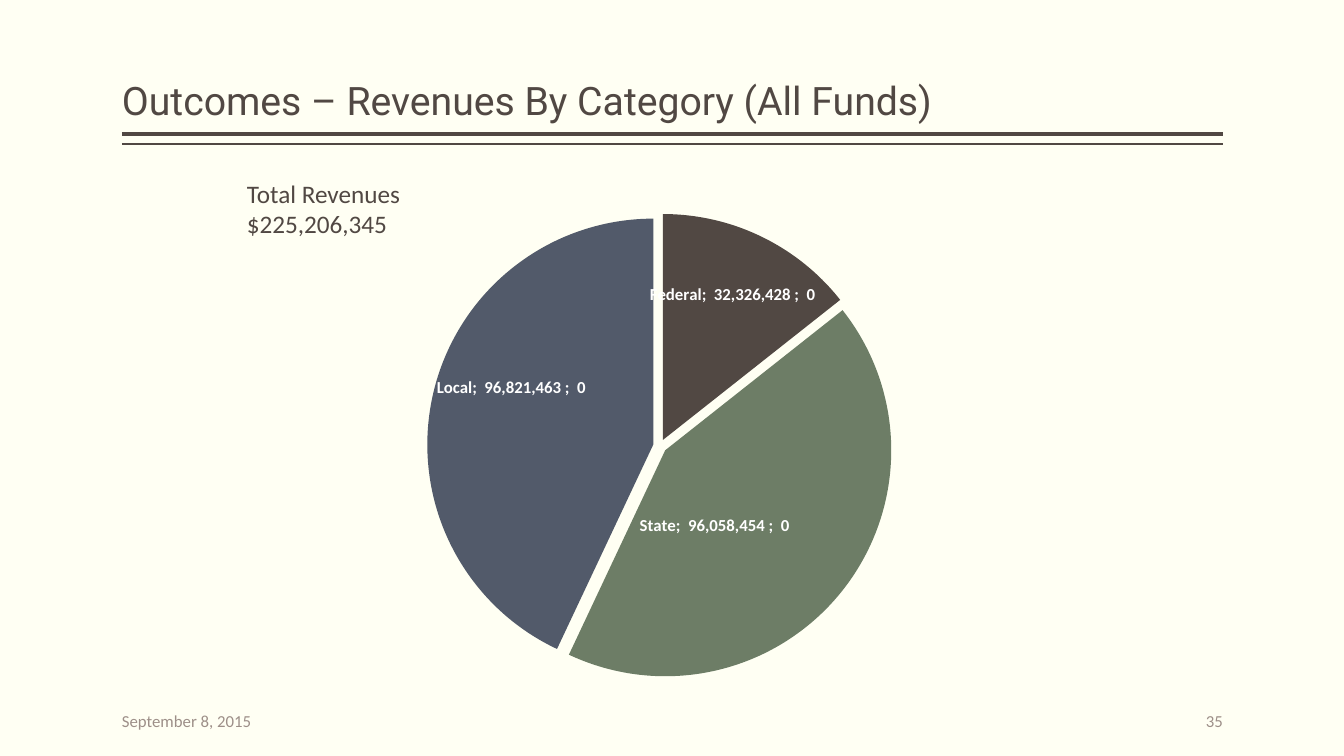
from copy import deepcopy
from dataclasses import dataclass

from lxml import etree
from pptx import Presentation
from pptx import util as u
from pptx.chart.data import CategoryChartData
from pptx.dml.color import RGBColor
from pptx.enum import chart as ch, shapes, text
from pptx.oxml import ns


@dataclass(frozen=True)
class Theme:
    background: str = "FFFFF3"
    ink: str = "514843"
    muted: str = "9D8F88"
    label: str = "FFFFFF"
    slices: tuple = ("514843", "6D7D66", "525A6A")
    heading_font: str = "Roboto"
    body_font: str = "Calibri"
    title_size: int = 28
    body_size: int = 18
    small_size: int = 12


THEME = Theme()
LEFT, RIGHT = 1.21, 12.13
REVENUES = {"Federal": 32326428, "State": 96058454, "Local": 96821463}
LABEL_SHIFTS = ((0.03, -0.08), (-0.05, 0.01), (-0.04, -0.06))
PLOT_AREA = {"x": 0.2, "y": 0.1, "w": 0.63, "h": 0.86}
NUMBER_FORMAT = '_(* #,##0_);_(* \\(#,##0\\);_(* "-"??_);_(@_)'


def rgb(value):
    return RGBColor.from_string(value)


def style_font(font, size, color, name=THEME.body_font):
    font.size = u.Pt(size)
    font.name = name
    font.color.rgb = rgb(color)


def place(shape, left, top, width, height):
    shape.left, shape.top = u.Inches(left), u.Inches(top)
    shape.width, shape.height = u.Inches(width), u.Inches(height)


def add_title(slide, wording):
    title = slide.shapes.title
    place(title, LEFT, 0.08, RIGHT - LEFT, 1.2)
    frame = title.text_frame
    frame.text = wording
    frame.vertical_anchor = text.MSO_ANCHOR.BOTTOM
    frame.margin_left = frame.margin_right = 0
    para = frame.paragraphs[0]
    para.alignment = text.PP_ALIGN.LEFT
    para.line_spacing = 0.9
    style_font(para.runs[0].font, THEME.title_size, THEME.ink, THEME.heading_font)


def add_rule(slide, top, weight):
    rule = slide.shapes.add_connector(
        shapes.MSO_CONNECTOR.STRAIGHT,
        u.Inches(LEFT), u.Inches(top), u.Inches(RIGHT), u.Inches(top))
    rule.line.color.rgb = rgb(THEME.ink)
    rule.line.width = u.Pt(weight)
    etree.SubElement(rule._element.spPr, ns.qn("a:effectLst"))


def add_text(slide, wording, bounds, size, color):
    box = slide.shapes.add_textbox(*(u.Inches(length) for length in bounds))
    frame = box.text_frame
    frame.word_wrap = True
    frame.text = wording
    for para in frame.paragraphs:
        style_font(para.runs[0].font, size, color)
    return frame


def add_footer(slide, wording, left, alignment):
    frame = add_text(slide, wording, (left, 6.95, 2, 0.4),
                     THEME.small_size, THEME.muted)
    frame.vertical_anchor = text.MSO_ANCHOR.MIDDLE
    frame.margin_left = frame.margin_right = 0
    frame.paragraphs[0].alignment = alignment


def chart_element(tag, value=None):
    element = etree.Element(ns.qn(f"c:{tag}"))
    if value is not None:
        element.set("val", str(value))
    return element


def manual_layout(settings):
    layout = chart_element("layout")
    manual = etree.SubElement(layout, ns.qn("c:manualLayout"))
    manual.extend(chart_element(tag, value) for tag, value in settings.items())
    return layout


def shift_labels(labels, shifts):
    """Give each slice its own label, moved by a share of the chart size."""
    shared = [child for child in labels if child.tag != ns.qn("c:showLeaderLines")]
    for index, (x, y) in enumerate(shifts):
        label = chart_element("dLbl")
        label.append(chart_element("idx", index))
        label.append(manual_layout({"x": x, "y": y}))
        label.extend(deepcopy(child) for child in shared)
        labels.insert(index, label)


def add_revenue_pie(slide):
    data = CategoryChartData(number_format=NUMBER_FORMAT)
    data.categories = list(REVENUES)
    data.add_series("Series 1", list(REVENUES.values()))
    bounds = (u.Inches(length) for length in (2.74, 1.58, 7.39, 5.37))
    chart = slide.shapes.add_chart(ch.XL_CHART_TYPE.PIE, *bounds, data).chart
    chart.has_legend = False
    chart.has_title = False
    style_font(chart.font, 10, THEME.ink)
    plot = chart.plots[0]
    plot.vary_by_categories = True

    series = plot.series[0]
    series._element.find(ns.qn("c:tx")).addnext(chart_element("explosion", 3))
    for index, color in enumerate(THEME.slices):
        fmt = series.points[index].format
        fmt.fill.solid()
        fmt.fill.fore_color.rgb = rgb(color)
        fmt.line.fill.background()

    labels = series.data_labels
    labels.show_category_name = labels.show_value = labels.show_percentage = True
    labels.number_format = NUMBER_FORMAT
    labels.number_format_is_linked = False
    labels.position = ch.XL_LABEL_POSITION.CENTER
    style_font(labels.font, THEME.small_size, THEME.label)
    labels.font.bold = True
    shift_labels(labels._element, LABEL_SHIFTS)

    area = chart._chartSpace.find(".//" + ns.qn("c:plotArea"))
    for layout in area.findall(ns.qn("c:layout")):
        area.remove(layout)
    area.insert(0, manual_layout(
        {"layoutTarget": "inner", "xMode": "edge", "yMode": "edge", **PLOT_AREA}))


def main():
    deck = Presentation()
    deck.slide_width, deck.slide_height = u.Inches(13.33), u.Inches(7.5)
    slide = deck.slides.add_slide(deck.slide_layouts[5])
    slide.background.fill.solid()
    slide.background.fill.fore_color.rgb = rgb(THEME.background)

    add_rule(slide, 1.33, 3)
    add_rule(slide, 1.43, 1)
    add_title(slide, "Outcomes – Revenues By Category (All Funds)")
    add_footer(slide, "35", RIGHT - 2, text.PP_ALIGN.RIGHT)
    add_footer(slide, "September 8, 2015", LEFT, text.PP_ALIGN.LEFT)
    add_revenue_pie(slide)
    add_text(slide, "Total Revenues\n$225,206,345", (2.35, 1.72, 2.16, 0.71),
             THEME.body_size, THEME.ink)
    deck.save("out.pptx")


if __name__ == "__main__":
    main()
